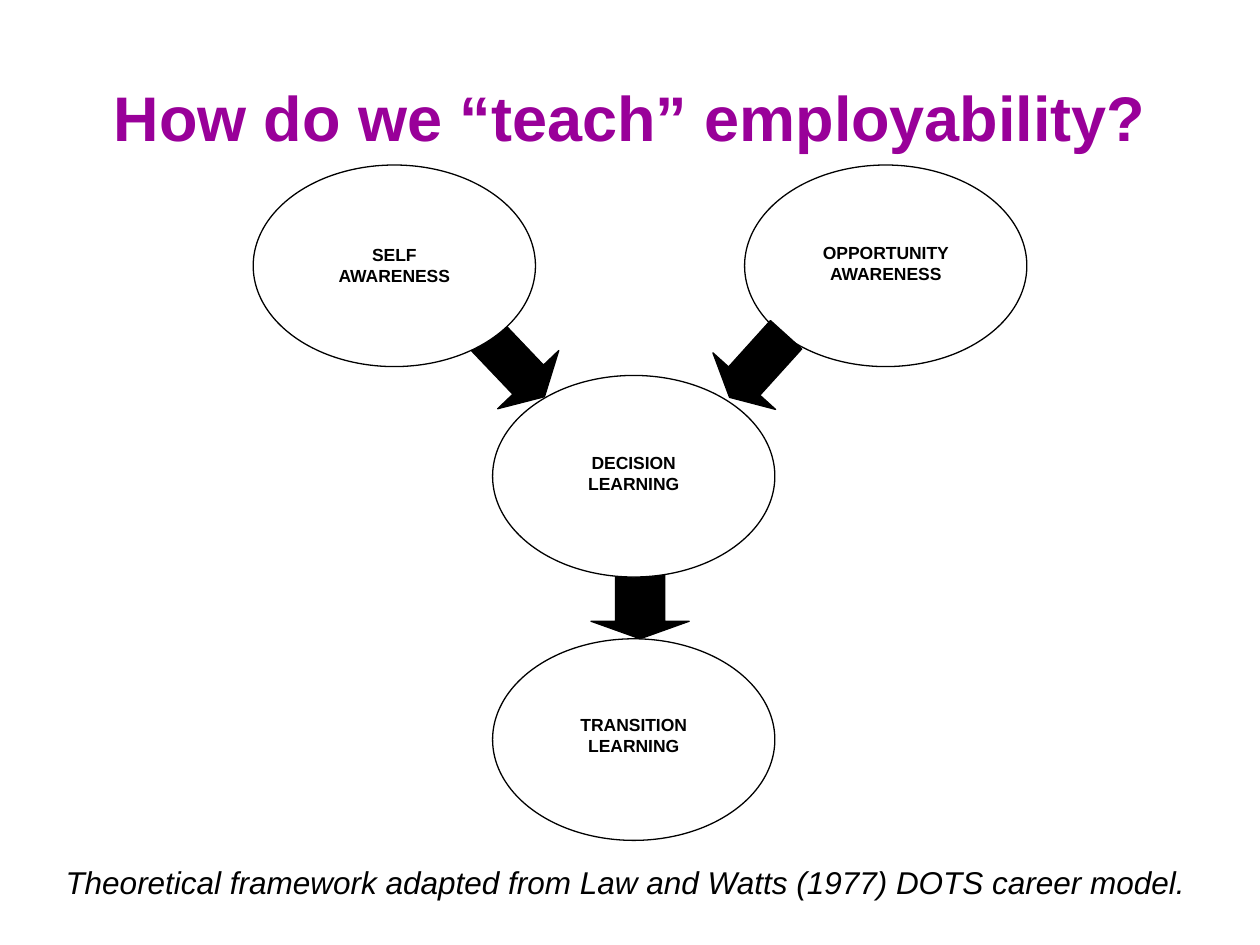
from dataclasses import dataclass

from pptx import Presentation
from pptx import util as u
from pptx.dml import color
from pptx.enum import shapes, text


@dataclass(frozen=True)
class Theme:
    font: str = "Arial"
    title: str = "990099"
    ink: str = "000000"
    paper: str = "FFFFFF"
    title_size: float = 36
    stage_size: float = 10
    caption_size: float = 18
    line_width: float = 0.75


class SlideBuilder:
    COLUMNS, ROWS = 100, 75

    def __init__(self, presentation, theme):
        self.theme = theme
        self.column = presentation.slide_width / self.COLUMNS
        self.row = presentation.slide_height / self.ROWS
        self.slide = presentation.slides.add_slide(presentation.slide_layouts[6])

    def box(self, left, top, width, height):
        return [round(length * cell) for length, cell in
                zip((left, top, width, height), (self.column, self.row) * 2)]

    def set_text(self, shape, wording, size, ink, align, bold=False, italic=False):
        frame = shape.text_frame
        frame.word_wrap = True
        frame.text = wording
        for paragraph in frame.paragraphs:
            paragraph.alignment = align
            for run in paragraph.runs:
                run.font.name = self.theme.font
                run.font.size = u.Pt(size)
                run.font.bold = bold
                run.font.italic = italic
                run.font.color.rgb = color.RGBColor.from_string(ink)
        return frame

    def draw(self, kind, area, fill):
        shape = self.slide.shapes.add_shape(kind, *self.box(*area))
        shape.shadow.inherit = False
        shape.fill.solid()
        shape.fill.fore_color.rgb = color.RGBColor.from_string(fill)
        shape.line.color.rgb = color.RGBColor.from_string(self.theme.ink)
        shape.line.width = u.Pt(self.theme.line_width)
        return shape

    def title(self, wording, area):
        shape = self.slide.shapes.add_textbox(*self.box(*area))
        frame = self.set_text(shape, wording, self.theme.title_size, self.theme.title,
                              text.PP_ALIGN.CENTER, bold=True)
        frame.vertical_anchor = text.MSO_ANCHOR.MIDDLE

    def caption(self, wording, area, indent):
        shape = self.slide.shapes.add_textbox(*self.box(*area))
        frame = self.set_text(shape, wording, self.theme.caption_size, self.theme.ink,
                              text.PP_ALIGN.LEFT, italic=True)
        frame.margin_left = round(indent * self.column)

    def stage(self, wording, left, top, text_drop):
        shape = self.draw(shapes.MSO_SHAPE.OVAL, (left, top, 22.4, 16), self.theme.paper)
        frame = self.set_text(shape, wording, self.theme.stage_size, self.theme.ink,
                              text.PP_ALIGN.CENTER, bold=True)
        frame.vertical_anchor = text.MSO_ANCHOR.TOP
        frame.margin_top = round(text_drop * self.row)

    def arrow(self, area, rotation, head):
        shape = self.draw(shapes.MSO_SHAPE.LEFT_ARROW, area, self.theme.ink)
        shape.adjustments[0] = 0.5
        shape.adjustments[1] = head
        shape.rotation = rotation


def main():
    presentation = Presentation()
    presentation.slide_width = u.Inches(10)
    presentation.slide_height = u.Inches(7.5)
    builder = SlideBuilder(presentation, Theme())

    builder.title("How do we “teach” employability?", (5, 3, 90, 12.5))
    builder.stage("OPPORTUNITY AWARENESS", 59.1, 13.1, 3.75)
    for area, rotation, head in (
        ((37.3, 25.6, 7, 6.7), 226.4, 0.28),
        ((48, 44, 5.6, 7.8), 270, 0.25),
        ((56.8, 25.7, 6.7, 6.7), 312.1, 0.26),
    ):
        builder.arrow(area, rotation, head)
    for wording, left, top, text_drop in (
        ("SELF\nAWARENESS", 20.1, 13.1, 3.9),
        ("DECISION\nLEARNING", 39.1, 29.8, 3.75),
        ("TRANSITION LEARNING", 39.1, 50.7, 3.6),
    ):
        builder.stage(wording, left, top, text_drop)
    builder.caption("Theoretical framework adapted from Law and Watts (1977) DOTS career model.",
                    (3.5, 68, 96.5, 4), 1.7)

    presentation.save("out.pptx")


if __name__ == "__main__":
    main()
